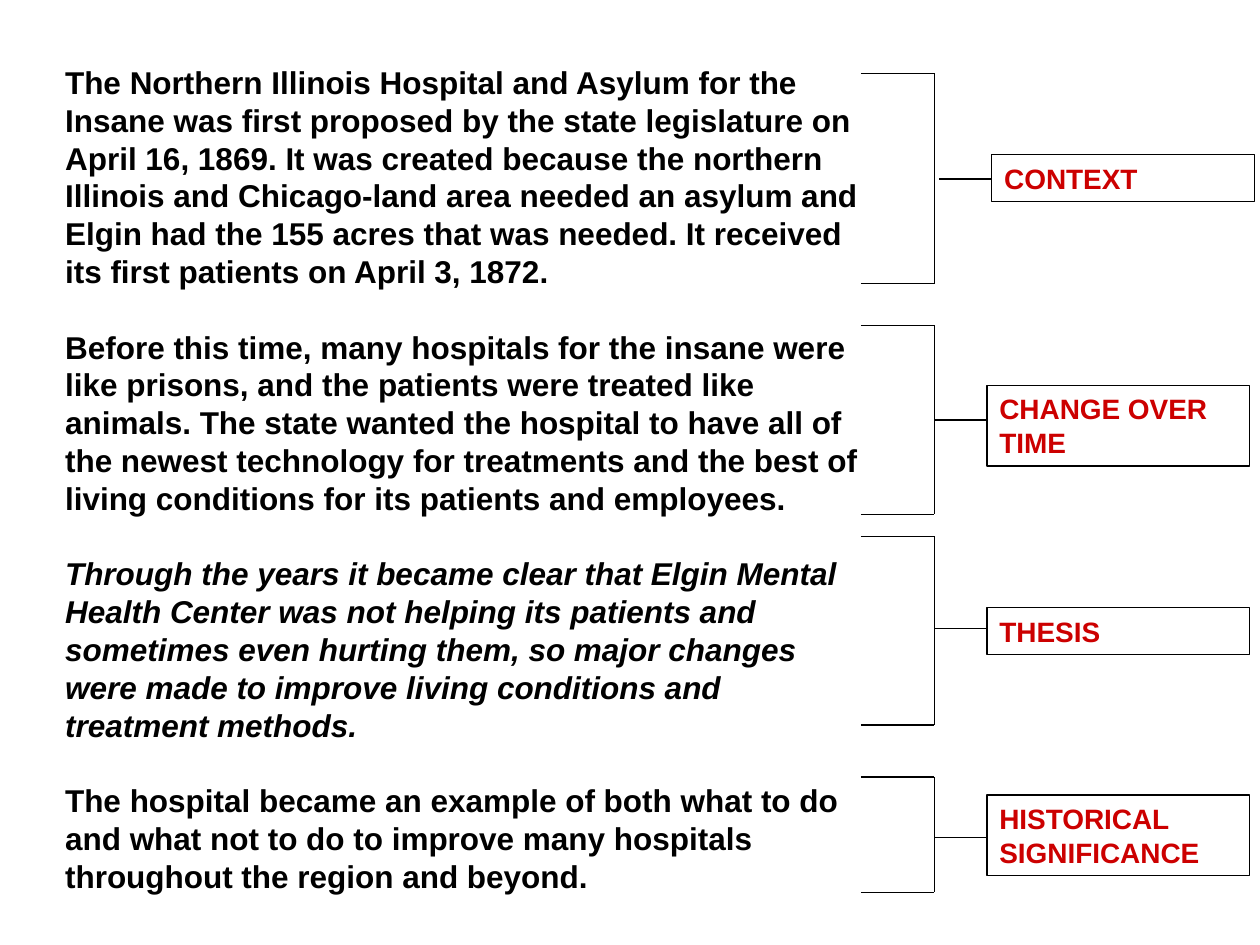
from dataclasses import dataclass

from lxml.etree import SubElement
from pptx import Presentation
from pptx.dml.color import RGBColor
from pptx.enum.shapes import MSO_CONNECTOR, MSO_SHAPE
from pptx.enum.text import MSO_ANCHOR, MSO_AUTO_SIZE, PP_ALIGN
from pptx.oxml.ns import qn
from pptx.util import Pt


@dataclass(frozen=True)
class Theme:
    font: str = "Arial"
    ink: RGBColor = RGBColor(0x00, 0x00, 0x00)
    accent: RGBColor = RGBColor(0xCC, 0x00, 0x00)
    body_size: float = 18
    body_leading: float = 21.6
    label_size: float = 16
    label_leading: float = 19.4
    line_width: float = 0.75


@dataclass(frozen=True)
class Section:
    text: str
    label: str
    top: float
    bottom: float
    stem_y: float
    label_top: float
    label_height: float
    shift: float = 0
    italic: bool = False


BRACKET_LEFT = 492
BRACKET_RIGHT = 534
LABEL_LEFT = 564
LABEL_WIDTH = 150

SECTIONS = [
    Section(
        "The Northern Illinois Hospital and Asylum for the Insane was first proposed "
        "by the state legislature on April 16, 1869. It was created because the "
        "northern Illinois and Chicago-land area needed an asylum and Elgin had the "
        "155 acres that was needed. It received its first patients on April 3, 1872.",
        "CONTEXT", 42, 162, 102.25, 88.5, 26.75, shift=2.75,
    ),
    Section(
        "Before this time, many hospitals for the insane were like prisons, and the "
        "patients were treated like animals. The state wanted the hospital to have "
        "all of the newest technology for treatments and the best of living "
        "conditions for its patients and employees.",
        "CHANGE OVER TIME", 186, 294, 240, 220.25, 46,
    ),
    Section(
        "Through the years it became clear that Elgin Mental Health Center was not "
        "helping its patients and sometimes even hurting them, so major changes were "
        "made to improve living conditions and treatment methods.",
        "THESIS", 306.5, 414.25, 359.25, 347.25, 26.75, italic=True,
    ),
    Section(
        "The hospital became an example of both what to do and what not to do to "
        "improve many hospitals throughout the region and beyond.",
        "HISTORICAL SIGNIFICANCE", 444, 510, 478.5, 454.25, 46,
    ),
]


class SlideBuilder:
    def __init__(self, page, theme):
        self.page = page
        self.theme = theme

    def frame(self, box):
        frame = box.text_frame
        frame.word_wrap = True
        frame.auto_size = MSO_AUTO_SIZE.NONE
        frame.vertical_anchor = MSO_ANCHOR.TOP
        frame.margin_left = frame.margin_right = Pt(7.2)
        frame.margin_top = frame.margin_bottom = Pt(3.6)
        return frame

    def add_text(self, para, text, size, leading, color, italic=False):
        para.alignment = PP_ALIGN.LEFT
        para.line_spacing = Pt(leading)
        para.space_before = para.space_after = Pt(0)
        span = para.add_run()
        span.text = text
        span.font.name = self.theme.font
        span.font.size = Pt(size)
        span.font.bold = True
        span.font.italic = italic
        span.font.color.rgb = color

    def body(self, sections, left, top, width, height):
        title = self.page.shapes.title
        title.element.getparent().remove(title.element)
        box = self.page.placeholders[1]
        box.left, box.top, box.width, box.height = map(Pt, (left, top, width, height))
        frame = self.frame(box)
        theme = self.theme
        for index, section in enumerate(sections):
            para = frame.add_paragraph() if index else frame.paragraphs[0]
            properties = para._p.get_or_add_pPr()
            properties.set("marL", "0")
            properties.set("indent", "0")
            SubElement(properties, qn("a:buNone"))
            self.add_text(para, section.text, theme.body_size, theme.body_leading,
                          theme.ink, section.italic)
            if index:
                para.space_before = Pt(theme.body_leading)

    def line(self, x1, y1, x2, y2):
        line = self.page.shapes.add_connector(
            MSO_CONNECTOR.STRAIGHT, Pt(x1), Pt(y1), Pt(x2), Pt(y2))
        line.line.color.rgb = self.theme.ink
        line.line.width = Pt(self.theme.line_width)
        SubElement(line.element.spPr, qn("a:effectLst"))

    def bracket(self, section):
        for y in (section.top, section.bottom):
            self.line(BRACKET_LEFT, y, BRACKET_RIGHT, y)
        self.line(BRACKET_RIGHT, section.top, BRACKET_RIGHT, section.bottom)
        self.line(BRACKET_RIGHT + section.shift, section.stem_y,
                  LABEL_LEFT + section.shift, section.stem_y)

    def label(self, section):
        box = self.page.shapes.add_shape(
            MSO_SHAPE.RECTANGLE, Pt(LABEL_LEFT + section.shift), Pt(section.label_top),
            Pt(LABEL_WIDTH), Pt(section.label_height))
        box.shadow.inherit = False
        box.fill.background()
        box.line.color.rgb = self.theme.ink
        box.line.width = Pt(self.theme.line_width)
        self.add_text(self.frame(box).paragraphs[0], section.label,
                      self.theme.label_size, self.theme.label_leading,
                      self.theme.accent)


def main():
    deck = Presentation()
    deck.slide_width, deck.slide_height = Pt(720), Pt(540)
    page = deck.slides.add_slide(deck.slide_layouts[1])
    builder = SlideBuilder(page, Theme())
    builder.body(SECTIONS, 30, 32.4, 474, 487.5)
    for section in SECTIONS:
        builder.bracket(section)
        builder.label(section)
    deck.save("out.pptx")


if __name__ == "__main__":
    main()
